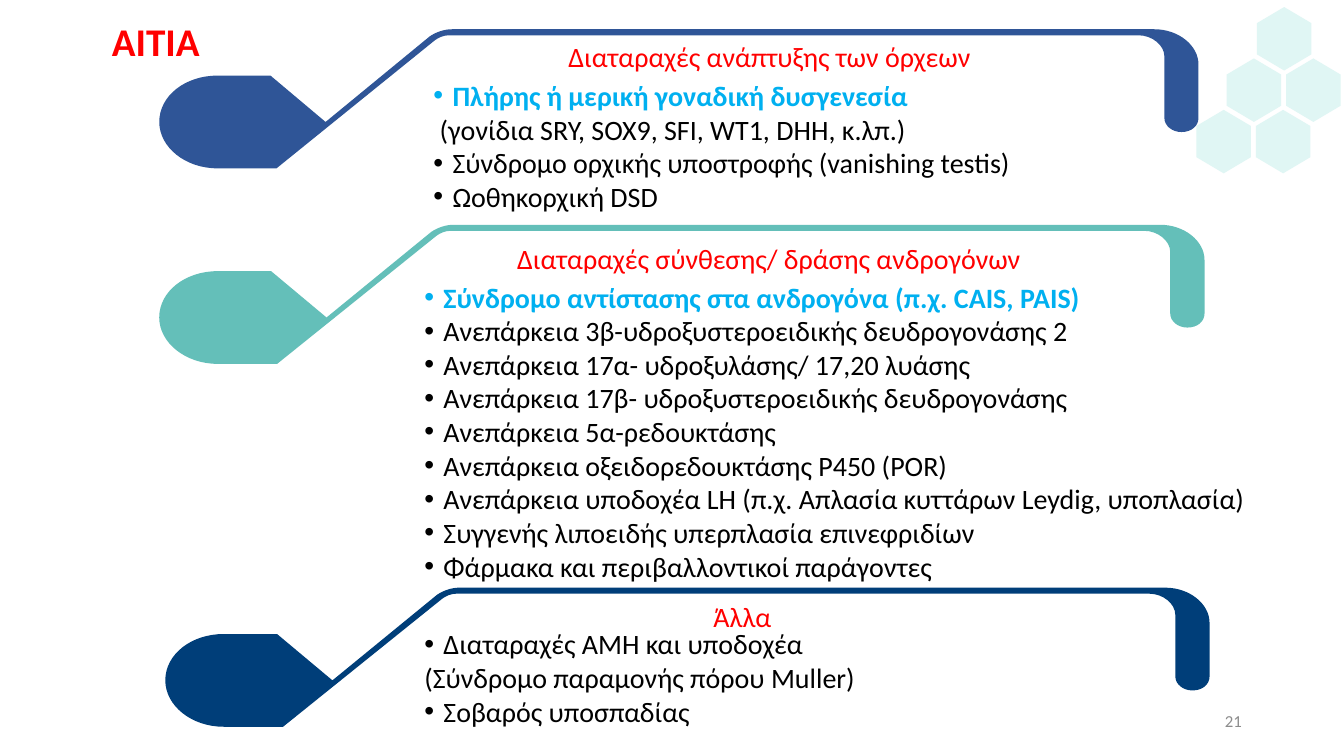
from lxml.etree import SubElement
from pptx import Presentation
from pptx.dml.color import RGBColor
from pptx.enum.text import MSO_ANCHOR, PP_ALIGN
from pptx.oxml.ns import qn
from pptx.util import Emu, Pt

SCALE = 9144
COLORS = {
    "red": "FF0000",
    "sky": "00B0F0",
    "black": "000000",
    "gray": "8C8C8C",
    "blue": "2F5597",
    "teal": "64BFB9",
    "navy": "003E79",
    "mint": "E0F6F4",
}
RIBBON = [
    (993, 0), (292, 0), (284, 0, 276, 3, 270, 7), (166, 92), (111, 46),
    (58, 46), (26, 46, 0, 66, 0, 92), (0, 117, 26, 138, 58, 138),
    (111, 138), (117, 138), (275, 11), (279, 8, 284, 6, 289, 6), (977, 6),
    (991, 6, 1003, 16, 1003, 27), (1003, 88),
    (1003, 96, 1011, 102, 1020, 102), (1030, 102, 1037, 96, 1037, 88),
    (1037, 35), (1037, 16, 1017, 0, 993, 0),
]
HEXAGON = [(27, 0), (54, 16), (54, 47), (27, 63), (0, 47), (0, 16), (27, 0)]


def px(count):
    return Emu(round(count * SCALE))


def write(para, text, size=20, color="black", bold=False, align=PP_ALIGN.LEFT, bullet=False):
    if bullet:
        props = para._p.get_or_add_pPr()
        props.set("marL", str(px(19)))
        props.set("indent", str(-px(19)))
        SubElement(props, qn("a:buFont"), typeface="Arial")
        SubElement(props, qn("a:buChar"), char="•")
    para.alignment = align
    run = para.add_run()
    run.text = text
    font = run.font
    font.name = "Calibri"
    font.size = Pt(size)
    font.bold = bold
    font.color.rgb = RGBColor.from_string(COLORS[color])


def bend(shape, parts):
    lines = list(shape._element.iter(qn("a:lnTo")))
    for line, part in zip(lines, parts):
        if len(part) == 1:
            continue
        curve = line.makeelement(qn("a:cubicBezTo"))
        for x, y in part:
            SubElement(curve, qn("a:pt"), x=str(x - shape.left), y=str(y - shape.top))
        line.getparent().replace(line, curve)


class Painter:
    def __init__(self, slide):
        self.shapes = slide.shapes

    def outline(self, path, left, top, color, stretch=1):
        parts = [
            [(px(left + x * stretch), px(top + y)) for x, y in zip(part[::2], part[1::2])]
            for part in path
        ]
        maker = self.shapes.build_freeform(*parts[0][0])
        maker.add_line_segments([part[-1] for part in parts[1:]], close=True)
        shape = maker.convert_to_shape()
        bend(shape, parts[1:])
        shape.shadow.inherit = False
        shape.fill.solid()
        shape.fill.fore_color.rgb = RGBColor.from_string(COLORS[color])
        shape.line.fill.background()

    def box(self, place, lines, anchor=MSO_ANCHOR.TOP, inset=0):
        frame = self.shapes.add_textbox(*map(px, place)).text_frame
        frame.word_wrap = True
        frame.vertical_anchor = anchor
        frame.margin_left = frame.margin_right = px(inset)
        frame.margin_top = frame.margin_bottom = px(5)
        for index, (text, style) in enumerate(lines):
            para = frame.add_paragraph() if index else frame.paragraphs[0]
            write(para, text, **style)

    def ribbon(self, left, top, width, color):
        self.outline(RIBBON, left, top, color, width / 1037)

    def heading(self, place, text):
        style = {"color": "red", "align": PP_ALIGN.CENTER}
        self.box(place, [(text, style)], MSO_ANCHOR.BOTTOM)

    def honeycomb(self):
        for row, cols in enumerate([2, 2, 1]):
            for col in range(cols):
                self.outline(HEXAGON, 1187 + 59 * col + 30 * row, 109 - 51 * row, "mint")


ITEM = {"bullet": True}
KEY = {"bullet": True, "color": "sky", "bold": True}
PLAIN = {}

SECTIONS = [
    ((158, 223, 1037, "teal"),
     (450, 234, 632, 44), "Διαταραχές σύνθεσης/ δράσης ανδρογόνων ",
     (421, 273, 906, 347), [
         ("Σύνδρομο αντίστασης στα ανδρογόνα (π.χ. CAIS, PAIS)", KEY),
         ("Ανεπάρκεια 3β-υδροξυστεροειδικής δευδρογονάσης 2", ITEM),
         ("Ανεπάρκεια 17α- υδροξυλάσης/ 17,20 λυάσης", ITEM),
         ("Ανεπάρκεια 17β- υδροξυστεροειδικής δευδρογονάσης", ITEM),
         ("Ανεπάρκεια 5α-ρεδουκτάσης", ITEM),
         ("Ανεπάρκεια οξειδορεδουκτάσης Ρ450 (POR)", ITEM),
         ("Ανεπάρκεια υποδοχέα LH (π.χ. Απλασία κυττάρων Leydig, υποπλασία)", ITEM),
         ("Συγγενής λιποειδής υπερπλασία επινεφριδίων", ITEM),
         ("Φάρμακα και περιβαλλοντικοί παράγοντες", ITEM),
     ]),
    ((164, 583, 1036, "navy"),
     (421, 589, 631, 44), "Άλλα",
     (421, 617, 734, 111), [
         ("Διαταραχές ΑΜΗ και υποδοχέα", ITEM),
         ("(Σύνδρομο παραμονής πόρου Muller)", PLAIN),
         ("Σοβαρός υποσπαδίας", ITEM),
     ]),
    ((158, 29, 1031, "blue"),
     (438, 33, 651, 44), "Διαταραχές ανάπτυξης των όρχεων",
     (430, 73, 783, 178), [
         ("Πλήρης ή μερική γοναδική δυσγενεσία", KEY),
         (" (γονίδια SRY, SOX9, SFI, WT1, DHH, κ.λπ.)", PLAIN),
         ("Σύνδρομο ορχικής υποστροφής (vanishing testis)", ITEM),
         ("Ωοθηκορχική DSD", ITEM),
     ]),
]


def main():
    deck = Presentation()
    deck.slide_height = px(750)
    deck.slide_width = Emu(deck.slide_height * 16 // 9)
    painter = Painter(deck.slides.add_slide(deck.slide_layouts[6]))
    painter.honeycomb()
    for ribbon, top, title, body, lines in SECTIONS:
        painter.ribbon(*ribbon)
        painter.heading(top, title)
        painter.box(body, lines)
    title = {"size": 28, "color": "red", "bold": True, "align": PP_ALIGN.CENTER}
    painter.box((14, 12, 281, 57), [("ΑΙΤΙΑ", title)], inset=10)
    number = {"size": 12, "color": "gray", "align": PP_ALIGN.RIGHT}
    painter.box((942, 695, 300, 40), [("21", number)], MSO_ANCHOR.MIDDLE, 10)
    deck.save("out.pptx")


if __name__ == "__main__":
    main()
